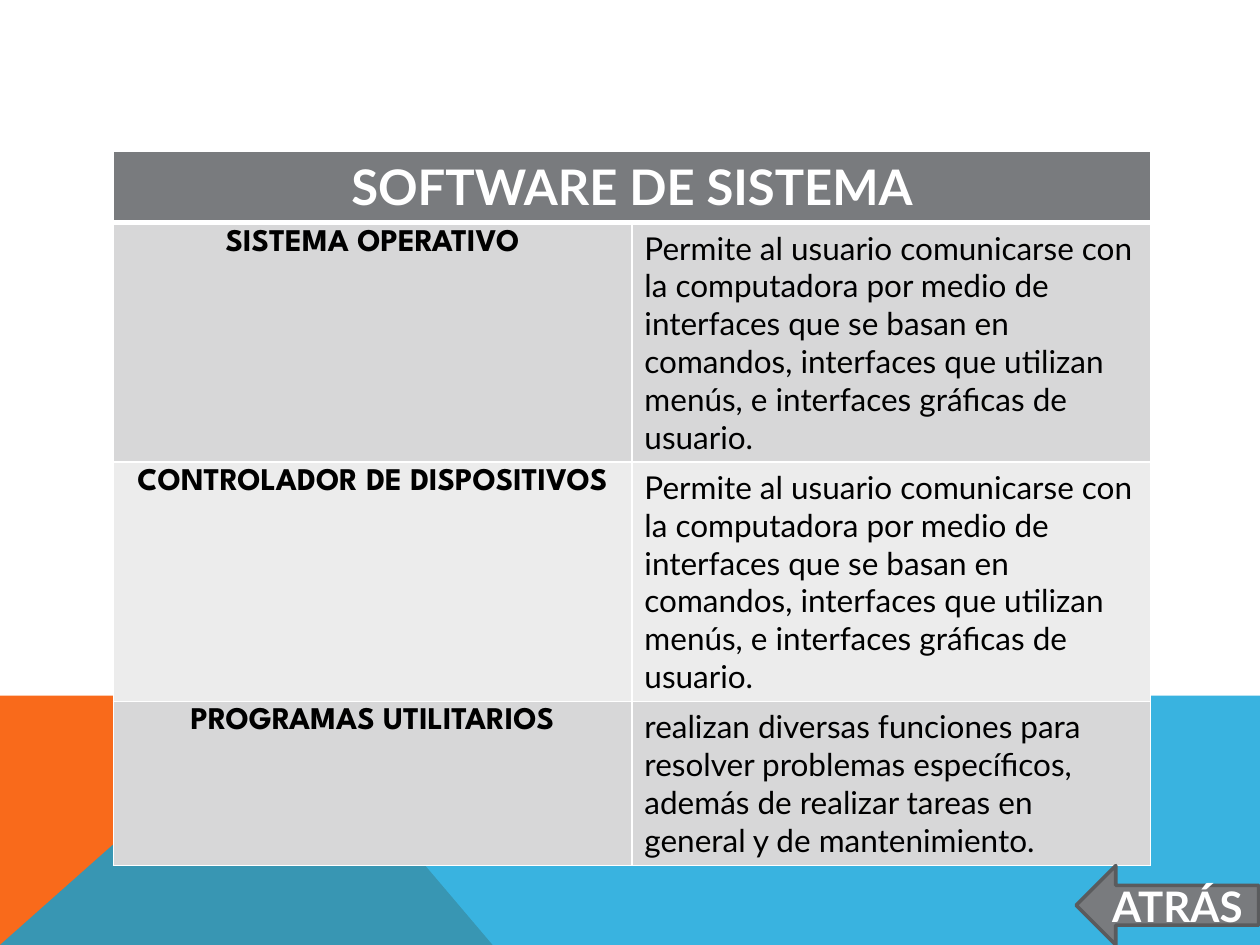
from pptx import Presentation
from pptx import util as u
from pptx.dml.color import RGBColor
from pptx.enum import shapes, text
from pptx.oxml import parse_xml
from pptx.oxml.ns import nsdecls, qn
from lxml import etree

COLUMNS, ROWS = 100, 75
BODY_FONT, LABEL_FONT = "Lato", "League Spartan"
WHITE, BLACK, GRAY, DARK_GRAY = "FFFFFF", "000000", "797B7E", "5A5B5D"
BANDS = ["D7D7D8", "ECECEC"]
COMMUNICATION = (
    "Permite al usuario comunicarse con la computadora por medio de "
    "interfaces que se basan en comandos, interfaces que utilizan menús, "
    "e interfaces gráficas de usuario."
)
SOFTWARE = [
    ("SISTEMA OPERATIVO", COMMUNICATION),
    ("CONTROLADOR DE DISPOSITIVOS", COMMUNICATION),
    ("PROGRAMAS UTILITARIOS",
     "realizan diversas funciones para resolver problemas específicos, "
     "además de realizar tareas en general y de mantenimiento."),
]


def paint(target, color):
    target.solid()
    target.fore_color.rgb = RGBColor.from_string(color)


class SlideBuilder:
    """Draws styled elements on the current slide, placed by grid columns and rows."""

    def __init__(self, deck):
        self.page = deck.slides.add_slide(deck.slide_layouts[6])
        self.column = deck.slide_width / COLUMNS
        self.row = deck.slide_height / ROWS

    def place(self, column, row):
        return round(column * self.column), round(row * self.row)

    def label(self, frame, words, size, color=BLACK, font=BODY_FONT, bold=True, centered=True):
        frame.text = words
        para = frame.paragraphs[0]
        para.alignment = text.PP_ALIGN.CENTER if centered else text.PP_ALIGN.LEFT
        style = para.runs[0].font
        style.name, style.size, style.bold = font, u.Pt(size), bold
        paint(style.fill, color)

    def polygon(self, points, color, opacity=100):
        start, *rest = [self.place(*point) for point in points]
        builder = self.page.shapes.build_freeform(*start)
        builder.add_line_segments(rest, close=True)
        shape = builder.convert_to_shape()
        shape.shadow.inherit = False
        paint(shape.fill, color)
        shape.line.fill.background()
        if opacity < 100:
            tint = shape.element.spPr.find(".//" + qn("a:srgbClr"))
            etree.SubElement(tint, qn("a:alpha")).set("val", str(opacity * 1000))

    def border(self, cell, top=1, bottom=1):
        properties = cell._tc.get_or_add_tcPr()
        widths = {"lnL": 1, "lnR": 1, "lnT": top, "lnB": bottom}
        for index, (side, width) in enumerate(widths.items()):
            properties.insert(index, parse_xml(
                f'<a:{side} {nsdecls("a")} w="{u.Pt(width)}"><a:solidFill>'
                f'<a:srgbClr val="{WHITE}"/></a:solidFill></a:{side}>'))

    def table(self, title, entries, corner, size, heights):
        frame = self.page.shapes.add_table(
            len(entries) + 1, 2, *self.place(*corner), *self.place(*size))
        table = frame.table
        for row, height in zip(table.rows, heights):
            row.height = round(height * self.row)
        for index, row in enumerate(table.rows):
            for cell in row.cells:
                paint(cell.fill, BANDS[(index - 1) % 2] if index else GRAY)
                self.border(cell, top=3 if index == 1 else 1, bottom=1 if index else 3)
        table.cell(0, 0).merge(table.cell(0, 1))
        self.label(table.cell(0, 0).text_frame, title, 28, WHITE)
        for index, (name, description) in enumerate(entries, 1):
            self.label(table.cell(index, 0).text_frame, name, 18, font=LABEL_FONT)
            self.label(table.cell(index, 1).text_frame, description, 18,
                       bold=False, centered=False)

    def arrow(self, words, corner, size):
        box = self.page.shapes.add_shape(
            shapes.MSO_SHAPE.LEFT_ARROW, *self.place(*corner), *self.place(*size))
        box.shadow.inherit = False
        paint(box.fill, GRAY)
        paint(box.line.fill, DARK_GRAY)
        box.line.width = u.Pt(2)
        box.text_frame.vertical_anchor = text.MSO_ANCHOR.MIDDLE
        self.label(box.text_frame, words, 24, WHITE)


def main():
    deck = Presentation()
    deck.slide_width, deck.slide_height = u.Inches(10), u.Inches(7.5)
    page = SlideBuilder(deck)
    horizon, peak = 55.2, 22.3
    page.polygon([(0, ROWS), (0, horizon), (peak, horizon), (39.1, ROWS)], "F96A1B")
    page.polygon([(0, ROWS), (peak, horizon), (COLUMNS, horizon), (COLUMNS, ROWS)],
                 "08A1D9", opacity=80)
    page.table("SOFTWARE DE SISTEMA", SOFTWARE, (9, 12), (82.3, 56.7),
               [5.6, 19, 19, 13])
    page.arrow("ATRÁS", (85.4, 68.7), (14.5, 6.3))
    deck.save("out.pptx")


if __name__ == "__main__":
    main()
